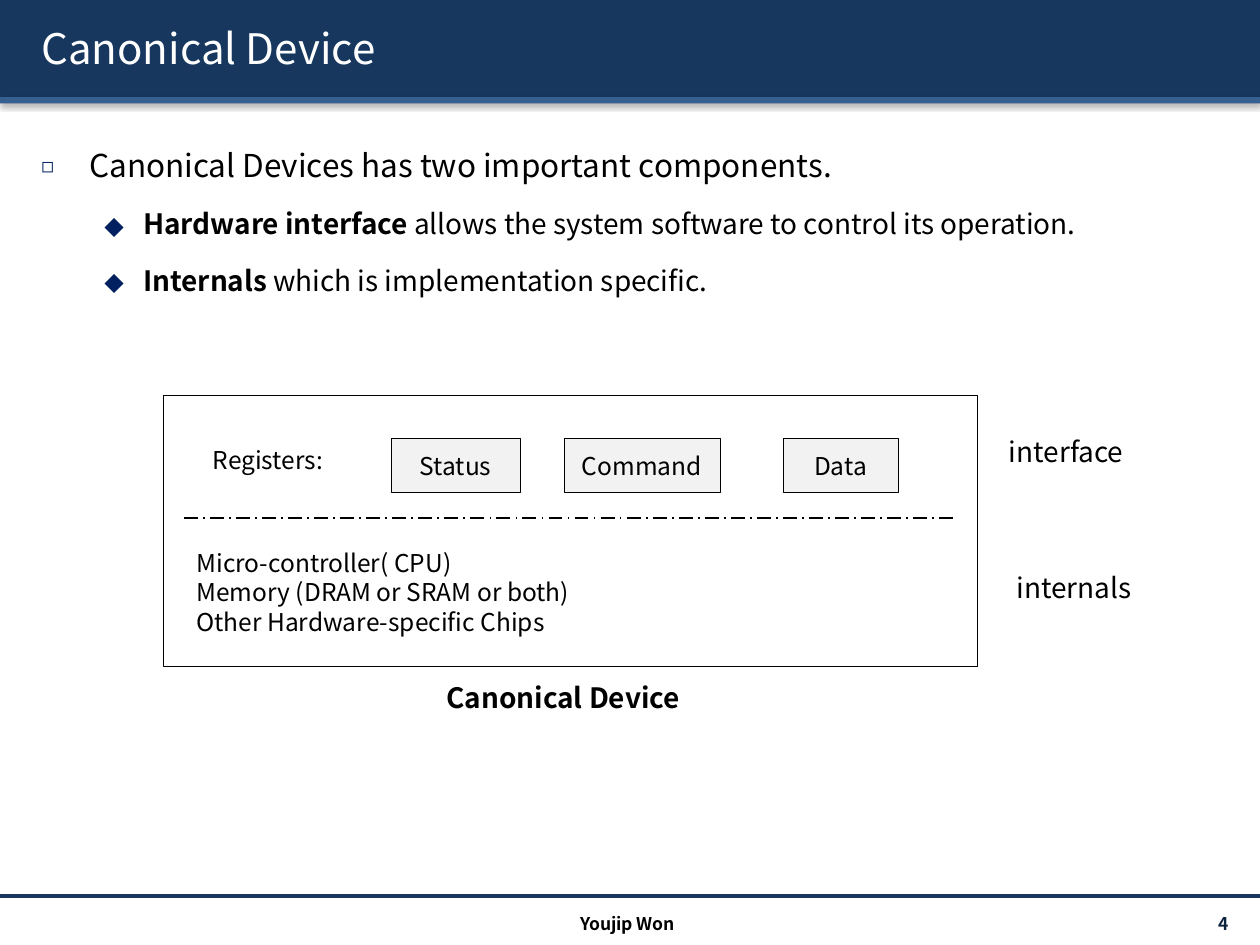
from lxml import etree
from pptx import Presentation
from pptx.dml.color import RGBColor
from pptx.enum import dml, shapes, text
from pptx.oxml import ns
from pptx.util import Inches, Pt

FONT = "Noto Sans CJK KR"
LEFT, MID, RIGHT = text.PP_ALIGN.LEFT, text.PP_ALIGN.CENTER, text.PP_ALIGN.RIGHT
TOP, CORE = text.MSO_ANCHOR.TOP, text.MSO_ANCHOR.MIDDLE


def hue(code):
    """Turn a hex string into a colour."""
    return RGBColor.from_string(code)


def node(parent, tag, **attrs):
    """Append a drawing element to a parent."""
    return etree.SubElement(parent, ns.qn("a:" + tag), attrs)


def shade(props, blur, dist, angle, alpha):
    """Give shape or run properties a black outer shadow."""
    drop = node(node(props, "effectLst"), "outerShdw", blurRad=str(Pt(blur)),
                dist=str(Pt(dist)), dir=str(angle * 60000), rotWithShape="0")
    node(node(drop, "srgbClr", val="000000"), "alpha", val=str(alpha * 1000))


def style(run, size=14, color="000000", bold=False):
    """Set the font of a run."""
    run.font.name, run.font.size, run.font.bold = FONT, Pt(size), bold
    run.font.color.rgb = hue(color)


def write(frame, lines, align=LEFT, anchor=TOP, pads=(0.1, 0.05, 0.1, 0.05), **font):
    """Fill a text frame with one paragraph for each line."""
    frame.word_wrap, frame.vertical_anchor = True, anchor
    (frame.margin_left, frame.margin_top,
     frame.margin_right, frame.margin_bottom) = map(Inches, pads)
    for i, line in enumerate(lines.split("\n")):
        para = frame.add_paragraph() if i else frame.paragraphs[0]
        para.alignment = align
        run = para.add_run()
        run.text = line
        style(run, **font)
    return frame


def label(slide, box, lines, **form):
    """Add a text box."""
    return write(slide.shapes.add_textbox(*map(Inches, box)).text_frame, lines, **form)


def rect(slide, box, fill=None, line=None):
    """Add a plain rectangle."""
    shape = slide.shapes.add_shape(shapes.MSO_SHAPE.RECTANGLE, *map(Inches, box))
    shape.shadow.inherit = False
    if fill:
        shape.fill.solid()
        shape.fill.fore_color.rgb = hue(fill)
    else:
        shape.fill.background()
    if line:
        shape.line.color.rgb, shape.line.width = hue(line), Pt(0.75)
    else:
        shape.line.fill.background()
    return shape


def rule(slide, left, right, y, color, width):
    """Add a level line."""
    line = slide.shapes.add_connector(
        shapes.MSO_CONNECTOR.STRAIGHT, *map(Inches, (left, y, right, y)))
    line.line.color.rgb, line.line.width = hue(color), Pt(width)
    node(line._element.spPr, "effectLst")
    return line


def header(slide, x, y, w, h):
    """Draw the title band and its lower strip."""
    for top, high, fill in ((y, h - 0.05, "17375E"), (y + h - 0.05, 0.05, "376092")):
        props = rect(slide, (x, top, w, high), fill)._element.spPr
        props.remove(props.find(ns.qn("a:effectLst")))
        shade(props, 3.1, 1.6, 90, 38)
    frame = label(slide, (x + 0.23, y + 0.06, w - 0.39, 0.64), "Canonical Device",
                  anchor=CORE, size=24, color="FFFFFF")
    props = frame.paragraphs[0].runs[0].font._element
    fonts = props.find(ns.qn("a:latin"))
    shade(props, 1, 1.5, 45, 100)
    fonts.addprevious(props[-1])


def bullet(para, mark, left, hang, scale):
    """Give a paragraph a hanging bullet."""
    props = para._p.get_or_add_pPr()
    props.set("marL", str(Inches(left)))
    props.set("indent", str(-Inches(hang)))
    node(node(props, "buClr"), "srgbClr", val="002060")
    node(props, "buSzPct", val=str(scale * 1000))
    node(props, "buFont", typeface=FONT)
    node(props, "buChar", char=mark)


def points(slide, x, y, w, h):
    """Write the bulleted list."""
    frame = label(slide, (x, y, w, h), "Canonical Devices has two important components.",
                  size=18)
    first = frame.paragraphs[0]
    first.line_spacing = 1.5
    bullet(first, "◻", 0.38, 0.38, 65)
    for term, rest in (
            ("Hardware interface", " allows the system software to control its operation."),
            ("Internals", " which is implementation specific.")):
        para = frame.add_paragraph()
        para.level, para.line_spacing, para.space_before = 1, 1.5, Pt(3.5)
        bullet(para, "⬥", 0.81, 0.31, 100)
        for words, bold in ((term, True), (rest, False)):
            run = para.add_run()
            run.text = words
            style(run, size=16, bold=bold)


def device(slide, x, y, w, h):
    """Draw the device with its registers, internals and labels."""
    rect(slide, (x, y, w, h), line="000000")
    label(slide, (x + 0.29, y + 0.34, 1.6, 0.34), "Registers:")
    for name, left, wide in (("Status", 1.81, 1.02), ("Command", 3.18, 1.24),
                             ("Data", 4.92, 0.91)):
        cell = rect(slide, (x + left, y + 0.34, wide, 0.43), "F2F2F2", "000000")
        write(cell.text_frame, name, align=MID, anchor=CORE, pads=(0.09, 0.05, 0.1, 0.05))
    dash = rule(slide, x + 0.16, x + w - 0.16, y + 0.97, "000000", 1)
    dash.line.dash_style = dml.MSO_LINE.LONG_DASH_DOT
    label(slide, (x + 0.16, y + 1.16, 4.25, 0.81),
          "Micro-controller( CPU)\nMemory (DRAM or SRAM or both)\nOther Hardware-specific Chips")
    label(slide, (x + w + 0.15, y + 0.26, 1.6, 0.37), "interface", size=16)
    label(slide, (x + w + 0.21, y + 1.34, 1.6, 0.37), "internals", size=16)
    label(slide, (x + 1.86, y + h + 0.06, 2.62, 0.37), "Canonical Device",
          align=MID, size=16, bold=True)


def footer(slide, x, y, w):
    """Draw the bottom rule, the author and the page number."""
    rule(slide, x, x + w, y, "17375E", 2)
    label(slide, (x + 3.32, y + 0.09, 3.32, 0.24), "Youjip Won",
          align=MID, size=10, bold=True)
    label(slide, (x + w - 1.29, y + 0.1, 1.17, 0.24), "4", align=RIGHT, anchor=CORE,
          pads=(0.1, 0.05, 0.13, 0.05), size=10, color="0F243E", bold=True)


def main():
    """Build and save the slide."""
    deck = Presentation()
    deck.slide_width, deck.slide_height = Inches(10), Inches(7.5)
    slide = deck.slides.add_slide(deck.slide_layouts[6])
    header(slide, 0, 0, 10, 0.82)
    points(slide, 0.23, 0.96, 9.61, 4.6)
    device(slide, 1.3, 3.14, 6.46, 2.15)
    footer(slide, 0, 7.11, 10)
    deck.save("out.pptx")


if __name__ == "__main__":
    main()
